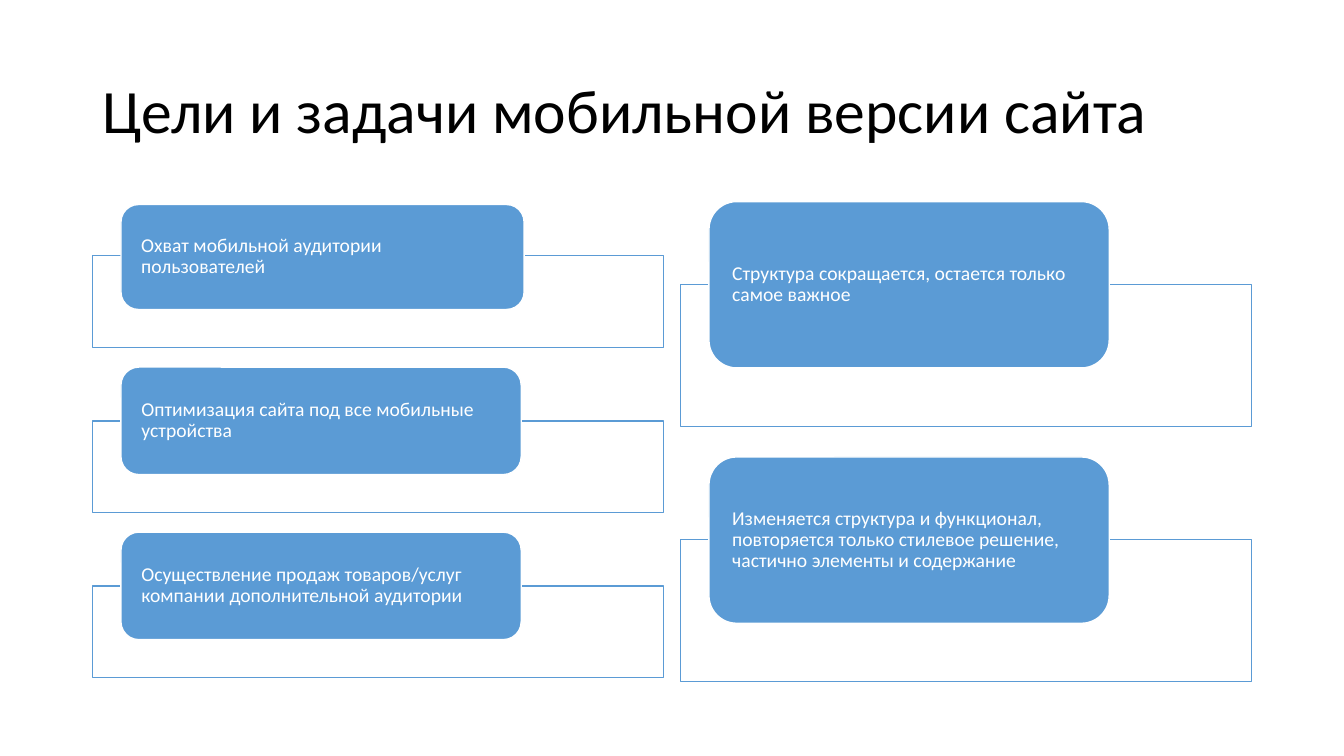
from lxml import etree
from pptx import Presentation
from pptx.dml.color import RGBColor
from pptx.enum.shapes import MSO_SHAPE
from pptx.enum.text import MSO_ANCHOR, PP_ALIGN
from pptx.oxml.ns import qn
from pptx.util import Inches, Pt

RECT, ROUNDED = MSO_SHAPE.RECTANGLE, MSO_SHAPE.ROUNDED_RECTANGLE
MIDDLE, LEFT = MSO_ANCHOR.MIDDLE, PP_ALIGN.LEFT
TITLE_ONLY = 5
COLUMNS, ROWS = 160, 90
COLORS = {"accent": "5B9BD5", "white": "FFFFFF", "black": "000000"}


class SlideBuilder:
    """Holds the style and the current slide; lengths are grid columns and rows."""

    font = "Calibri"

    def __init__(self, deck):
        self.column = deck.slide_width / COLUMNS
        self.row = deck.slide_height / ROWS
        self.page = deck.slides.add_slide(deck.slide_layouts[TITLE_ONLY])

    def place(self, left, top, width, height):
        return (round(left * self.column), round(top * self.row),
                round(width * self.column), round(height * self.row))

    def color(self, name):
        return RGBColor.from_string(COLORS[name])

    def set_text(self, shape, text, size, color):
        frame = shape.text_frame
        frame.word_wrap = True
        frame.vertical_anchor = MIDDLE
        para = frame.paragraphs[0]
        para.text = text
        para.alignment = LEFT
        para.line_spacing = 0.9
        para.font.name = self.font
        para.font.size = Pt(size)
        para.font.color.rgb = self.color(color)
        return frame

    def title(self, text, *area):
        box = self.page.shapes.title
        box.left, box.top, box.width, box.height = self.place(*area)
        self.set_text(box, text, 44, "black")

    def box(self, kind, area, fill, line):
        shape = self.page.shapes.add_shape(kind, *self.place(*area))
        shape.shadow.inherit = False
        shape.fill.solid()
        shape.fill.fore_color.rgb = self.color(fill)
        shape.line.color.rgb = self.color(line)
        shape.line.width = Pt(1)
        return shape

    def frame(self, *area):
        shape = self.box(RECT, area, "white", "accent")
        fill_color = shape.element.spPr.find(qn("a:solidFill"))[0]
        etree.SubElement(fill_color, qn("a:alpha"), val="90000")

    def label(self, text, *area):
        shape = self.box(ROUNDED, area, "accent", "white")
        frame = self.set_text(shape, text, 14, "white")
        frame.margin_left = frame.margin_right = Inches(0.15)
        frame.margin_top = frame.margin_bottom = 0

    def card_list(self, left, top, pitch, frame_height, cards):
        """Stacks frames at an equal pitch, each with a label rising above it."""
        for index, (text, rise, width, height) in enumerate(cards):
            card_top = top + index * pitch
            self.frame(left, card_top, 68, frame_height)
            self.label(text, left + 3.4, card_top - rise, width, height)


def main():
    deck = Presentation()
    deck.slide_width, deck.slide_height = Inches(13.33), Inches(7.5)
    slide = SlideBuilder(deck)

    # Heading
    slide.title("Цели и задачи мобильной версии сайта", 11, 4.8, 138, 17.4)

    # Goals: text, label rise, label width, label height
    slide.card_list(11, 30.45, 19.65, 10.9, [
        ("Охват мобильной аудитории пользователей", 6.1, 48, 12.5),
        ("Оптимизация сайта под все мобильные устройства", 6.4, 47.65, 12.8),
        ("Осуществление продаж товаров/услуг компании дополнительной аудитории",
         6.4, 47.65, 12.8),
    ])

    # Changes to the structure
    slide.card_list(81, 33.85, 30.4, 16.9, [
        ("Структура сокращается, остается только самое важное", 9.85, 47.65, 19.8),
        ("Изменяется структура и функционал, повторяется только стилевое решение, "
         "частично элементы и содержание", 9.85, 47.65, 19.8),
    ])

    deck.save("out.pptx")


if __name__ == "__main__":
    main()
